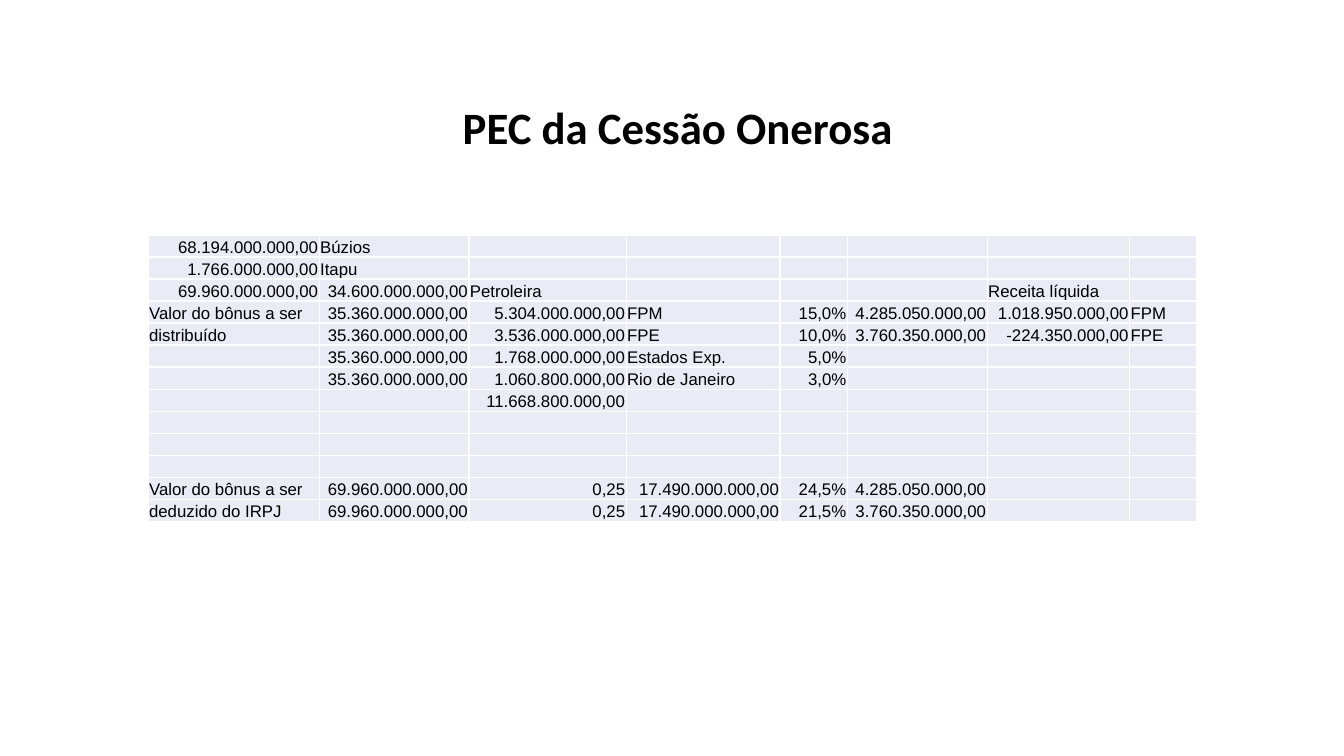
from typing import NamedTuple

from pptx import Presentation
from pptx import util as u
from pptx.dml.color import RGBColor
from pptx.enum import text
from pptx.oxml import parse_xml
from pptx.oxml.ns import nsdecls
from pptx.oxml.xmlchemy import OxmlElement

BLACK = RGBColor(0x00, 0x00, 0x00)
WHITE = RGBColor(0xFF, 0xFF, 0xFF)
PALE_BLUE = RGBColor(0xE9, 0xEB, 0xF5)


class Column(NamedTuple):
    width: float
    entries: dict[int, str]  # row number -> wording


BONUS_LABEL = "Valor do bônus a ser"
TOTAL_BONUS = "69.960.000.000,00"
SHARED_BONUS = "35.360.000.000,00"
FPM_DEDUCTION = "4.285.050.000,00"
FPE_DEDUCTION = "3.760.350.000,00"

ROW_COUNT = 13
ROW_HEIGHT = 15.75
CELL_SIZE = 12
CELL_INSET = 0.72

COLUMNS = [
    Column(122.2, {0: "68.194.000.000,00", 1: "1.766.000.000,00", 2: TOTAL_BONUS,
                   3: BONUS_LABEL, 4: "distribuído",
                   11: BONUS_LABEL, 12: "deduzido do IRPJ"}),
    Column(107, {0: "Búzios", 1: "Itapu", 2: "34.600.000.000,00",
                 **dict.fromkeys(range(3, 7), SHARED_BONUS),
                 **dict.fromkeys((11, 12), TOTAL_BONUS)}),
    Column(112.3, {2: "Petroleira", 3: "5.304.000.000,00", 4: "3.536.000.000,00",
                   5: "1.768.000.000,00", 6: "1.060.800.000,00",
                   7: "11.668.800.000,00", 11: "0,25", 12: "0,25"}),
    Column(110, {3: "FPM", 4: "FPE", 5: "Estados Exp.", 6: "Rio de Janeiro",
                 **dict.fromkeys((11, 12), "17.490.000.000,00")}),
    Column(48, {3: "15,0%", 4: "10,0%", 5: "5,0%", 6: "3,0%",
                11: "24,5%", 12: "21,5%"}),
    Column(100, {3: FPM_DEDUCTION, 4: FPE_DEDUCTION,
                 11: FPM_DEDUCTION, 12: FPE_DEDUCTION}),
    Column(101.8, {2: "Receita líquida", 3: "1.018.950.000,00",
                   4: "-224.350.000,00"}),
    Column(48, {3: "FPM", 4: "FPE"}),
]


def add_run(paragraph, wording: str, font_name: str, size: float,
            bold: bool = False) -> None:
    run = paragraph.add_run()
    run.text = wording
    run.font.name = font_name
    run.font.size = u.Pt(size)
    run.font.bold = bold
    run.font.color.rgb = BLACK


def style_cell(cell) -> None:
    cell.margin_left = cell.margin_right = cell.margin_top = u.Pt(CELL_INSET)
    cell.margin_bottom = u.Pt(0)
    cell.vertical_anchor = text.MSO_ANCHOR.BOTTOM
    properties = cell._tc.get_or_add_tcPr()
    for side in ("lnL", "lnR", "lnT", "lnB"):
        properties.append(parse_xml(
            f'<a:{side} {nsdecls("a")} w="{u.Pt(1)}"><a:solidFill>'
            f'<a:srgbClr val="{WHITE}"/></a:solidFill></a:{side}>'))
    cell.fill.solid()
    cell.fill.fore_color.rgb = PALE_BLUE


def write_cell(cell, wording: str) -> None:
    paragraph = cell.text_frame.paragraphs[0]
    if not wording:
        # Keep empty cells as low as the written ones
        end_mark = OxmlElement("a:endParaRPr")
        end_mark.set("sz", str(CELL_SIZE * 100))
        paragraph._p.append(end_mark)
        return
    is_figure = wording[-1].isdigit() or wording.endswith("%")
    paragraph.alignment = text.PP_ALIGN.RIGHT if is_figure else text.PP_ALIGN.LEFT
    add_run(paragraph, wording, "Arial", CELL_SIZE)


def add_revenue_table(slide, left: float, top: float) -> None:
    width = sum(column.width for column in COLUMNS)
    revenue = slide.shapes.add_table(
        ROW_COUNT, len(COLUMNS), u.Pt(left), u.Pt(top),
        u.Pt(width), u.Pt(ROW_COUNT * ROW_HEIGHT)).table
    revenue.first_row = False
    revenue.horz_banding = False
    for row in revenue.rows:
        row.height = u.Pt(ROW_HEIGHT)
    for column_number, column in enumerate(COLUMNS):
        revenue.columns[column_number].width = u.Pt(column.width)
        for row_number in range(ROW_COUNT):
            cell = revenue.cell(row_number, column_number)
            style_cell(cell)
            write_cell(cell, column.entries.get(row_number, ""))


def add_title(slide, wording: str) -> None:
    title = slide.shapes.add_textbox(u.Pt(270.7), u.Pt(67.7), u.Pt(427), u.Pt(46))
    frame = title.text_frame
    frame.word_wrap = True
    frame.auto_size = text.MSO_AUTO_SIZE.SHAPE_TO_FIT_TEXT
    paragraph = frame.paragraphs[0]
    paragraph.alignment = text.PP_ALIGN.CENTER
    add_run(paragraph, wording, "Calibri", 32, bold=True)


def main() -> None:
    deck = Presentation()
    deck.slide_width, deck.slide_height = u.Pt(960), u.Pt(540)
    slide = deck.slides.add_slide(deck.slide_layouts[6])

    # Figures, then heading
    add_revenue_table(slide, left=105.8, top=167.8)
    add_title(slide, "PEC da Cessão Onerosa")

    deck.save("out.pptx")


if __name__ == "__main__":
    main()
